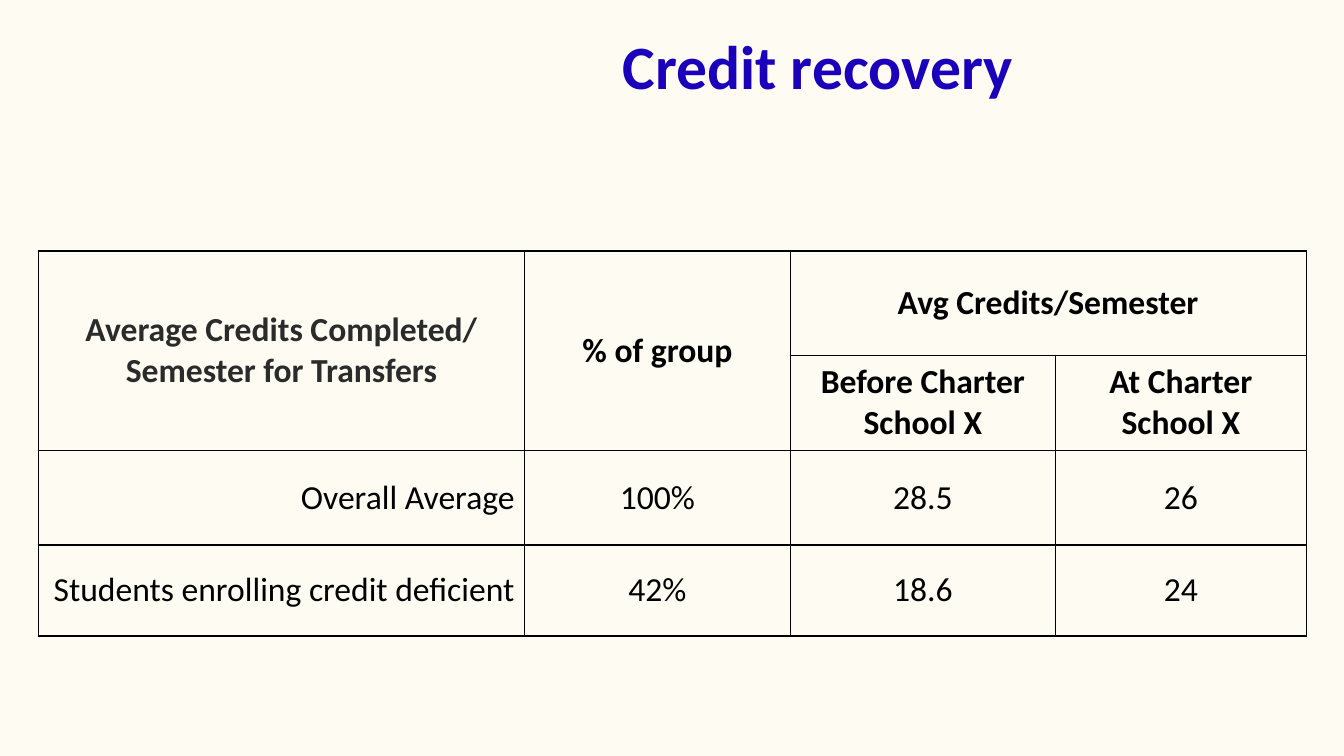
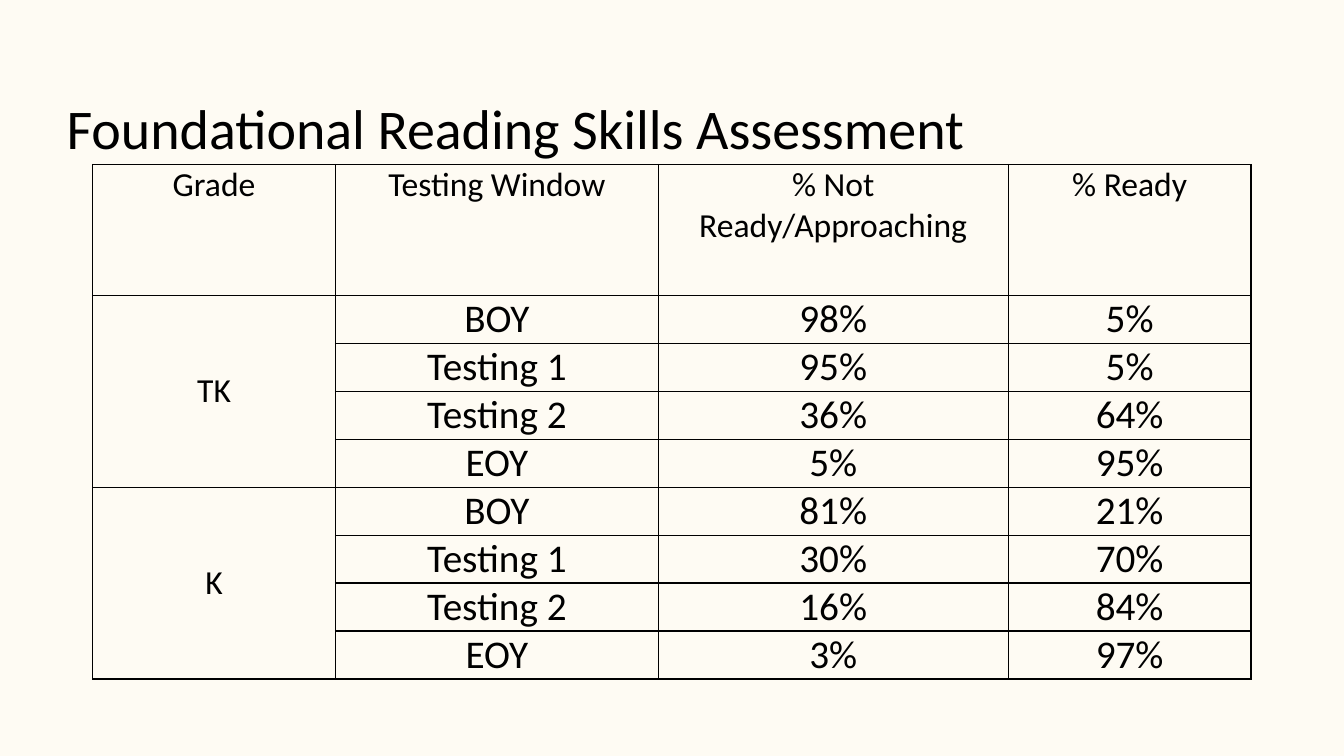
import pptx
import pptx.util
import pptx.dml.color
import pptx.enum.text
import lxml.etree

Pt = pptx.util.Pt
RGB = pptx.dml.color.RGBColor.from_string
ALIGN = pptx.enum.text.PP_ALIGN
ANCHOR = pptx.enum.text.MSO_ANCHOR
COLORS = {"paper": "FEFBF3", "black": "000000", "gray": "2A2B2B", "blue": "1A00BA"}
FONT = "Calibri"
NS = "http://schemas.openxmlformats.org/drawingml/2006/main"


def write(tf, text, size, color="black", bold=False, align=ALIGN.CENTER):
    p = tf.paragraphs[0]
    p.alignment = align
    r = p.add_run()
    r.text = text
    r.font.name = FONT
    r.font.size = Pt(size)
    r.font.bold = bold
    r.font.color.rgb = RGB(COLORS[color])
    return p


def add_grid(s, left, top, widths, heights, margin):
    tbl = s.shapes.add_table(len(heights), len(widths), Pt(left), Pt(top),
                             Pt(sum(widths)), Pt(sum(heights))).table
    tbl.first_row = tbl.horz_banding = False
    for col, width in zip(tbl.columns, widths):
        col.width = Pt(width)
    for row, height in zip(tbl.rows, heights):
        row.height = Pt(height)
    for cell in tbl.iter_cells():
        cell.margin_left = cell.margin_right = Pt(margin)
        cell.margin_top = cell.margin_bottom = 0
        cell.fill.background()
        tcPr = cell._tc.get_or_add_tcPr()
        for i, side in enumerate(("lnL", "lnR", "lnT", "lnB")):
            ln = lxml.etree.Element(f"{{{NS}}}{side}", w=str(Pt(1)))
            fill = lxml.etree.SubElement(ln, f"{{{NS}}}solidFill")
            lxml.etree.SubElement(fill, f"{{{NS}}}srgbClr", val=COLORS["black"])
            tcPr.insert(i, ln)
    return tbl


prs = pptx.Presentation()
prs.slide_width, prs.slide_height = Pt(960), Pt(540)
bg = prs.slide_master.background.fill
bg.solid()
bg.fore_color.rgb = RGB(COLORS["paper"])

titles = [
    ("Credit recovery", (234.7, 16.6, 699, 60.5), 44, "blue", True, ALIGN.CENTER, 1),
    ("Foundational Reading Skills Assessment", (40.3, 68.4, 880, 49), 40, "black", False, ALIGN.LEFT, 0.9),
]
slides = []
for text, box, size, color, bold, align, spacing in titles:
    s = prs.slides.add_slide(prs.slide_layouts[5])
    sp = s.shapes.title
    sp.left, sp.top, sp.width, sp.height = [Pt(v) for v in box]
    tf = sp.text_frame
    tf.auto_size = pptx.enum.text.MSO_AUTO_SIZE.NONE
    tf.vertical_anchor = ANCHOR.TOP
    p = write(tf, text, size, color, bold, align)
    p.line_spacing = spacing
    slides.append(s)

credits = [
    ["Average Credits Completed/ Semester for Transfers", "% of group", "Avg Credits/Semester", None],
    [None, None, "Before Charter School X", "At Charter School X"],
    ["Overall Average", "100%", "28.5", "26"],
    ["Students enrolling credit deficient", "42%", "18.6", "24"],
]
tbl = add_grid(slides[0], 27.2, 179.3, [347.6, 189.6, 189.6, 179], [74.5, 67.8, 67.8, 65], 7.2)
tbl.cell(0, 0).merge(tbl.cell(1, 0))
tbl.cell(0, 1).merge(tbl.cell(1, 1))
tbl.cell(0, 2).merge(tbl.cell(0, 3))
for i, row in enumerate(credits):
    for j, text in enumerate(row):
        if text is None:
            continue
        cell = tbl.cell(i, j)
        cell.vertical_anchor = ANCHOR.MIDDLE
        color = "gray" if i == j == 0 else "black"
        align = ALIGN.RIGHT if i > 1 and j == 0 else ALIGN.CENTER
        write(cell.text_frame, text, 24, color, i < 2, align)

windows = ["BOY", "Testing 1", "Testing 2", "EOY"]
grades = {
    "TK": [("98%", "5%"), ("95%", "5%"), ("36%", "64%"), ("5%", "95%")],
    "K": [("81%", "21%"), ("30%", "70%"), ("16%", "84%"), ("3%", "97%")],
}
tbl = add_grid(slides[1], 66.2, 117.4, [173.5, 230.5, 250, 173.5], [93.6] + [33.6] * 8, 5)
for j, text in enumerate(["Grade", "Testing Window", "% Not Ready/Approaching", "% Ready"]):
    write(tbl.cell(0, j).text_frame, text, 24)
for g, (grade, scores) in enumerate(grades.items()):
    first = 1 + g * len(windows)
    cell = tbl.cell(first, 0)
    cell.merge(tbl.cell(first + len(windows) - 1, 0))
    cell.vertical_anchor = ANCHOR.MIDDLE
    write(cell.text_frame, grade, 24)
    for i, (window, score) in enumerate(zip(windows, scores)):
        for j, text in enumerate((window, *score), 1):
            write(tbl.cell(first + i, j).text_frame, text, 28)

prs.save("out.pptx")
